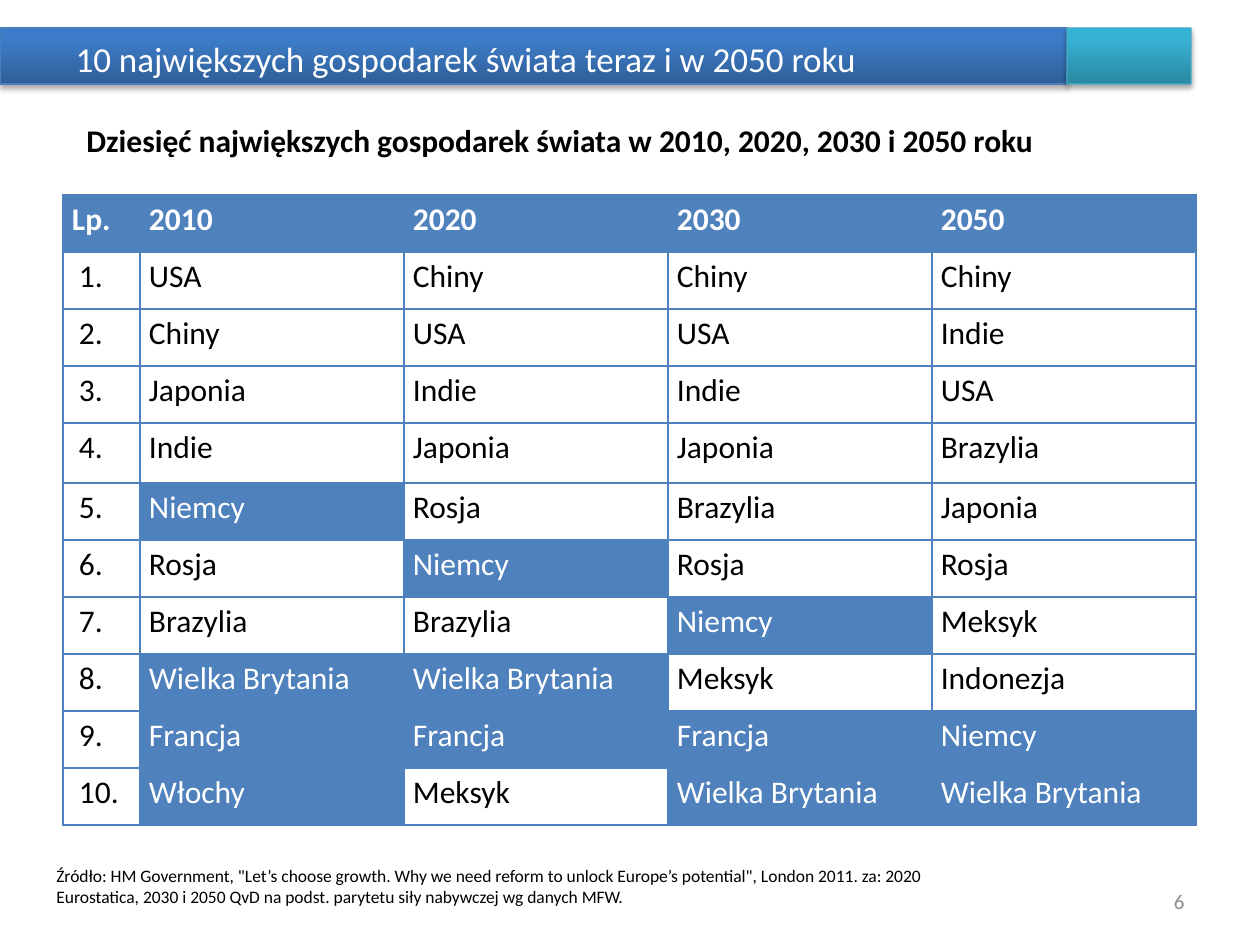
from copy import deepcopy
from dataclasses import dataclass

from lxml.etree import SubElement
from pptx import Presentation
from pptx.dml.color import RGBColor
from pptx.enum.shapes import MSO_SHAPE
from pptx.enum.text import MSO_ANCHOR, PP_ALIGN
from pptx.oxml.ns import qn
from pptx.util import Emu, Pt

FONT = "Calibri"
COLORS = {"white": "FFFFFF", "black": "000000", "grey": "8C8C8C", "blue": "4F81BD",
          "bar_line": "4B7EBC", "tab_line": "46AAC5"}
EUROPE = {"Niemcy", "Wielka Brytania", "Francja", "Włochy"}
RANKS = {
    "2010": ["USA", "Chiny", "Japonia", "Indie", "Niemcy", "Rosja", "Brazylia",
             "Wielka Brytania", "Francja", "Włochy"],
    "2020": ["Chiny", "USA", "Indie", "Japonia", "Rosja", "Niemcy", "Brazylia",
             "Wielka Brytania", "Francja", "Meksyk"],
    "2030": ["Chiny", "USA", "Indie", "Japonia", "Brazylia", "Rosja", "Niemcy",
             "Meksyk", "Francja", "Wielka Brytania"],
    "2050": ["Chiny", "Indie", "USA", "Brazylia", "Japonia", "Rosja", "Meksyk",
             "Indonezja", "Niemcy", "Wielka Brytania"],
}


def px(n: int) -> Emu:
    return Emu(round(n * 914400 / 126))


def rgb(name: str) -> RGBColor:
    return RGBColor.from_string(COLORS.get(name, name))


@dataclass
class Box:
    x: int
    y: int
    w: int
    h: int

    def emu(self) -> list:
        return [px(n) for n in (self.x, self.y, self.w, self.h)]


@dataclass
class Band:
    box: Box
    kind: MSO_SHAPE
    stops: list
    line: str


@dataclass
class Label:
    box: Box
    text: str
    size: int
    color: str = "black"
    bold: bool = False
    align: PP_ALIGN = PP_ALIGN.LEFT
    anchor: MSO_ANCHOR = MSO_ANCHOR.TOP


BANDS = [
    Band(Box(0, 28, 1067, 56), MSO_SHAPE.RECTANGLE,
         ["2F5F99", "3D7CC7", "3A7CCB"], "bar_line"),
    Band(Box(1067, 28, 124, 56), MSO_SHAPE.ROUNDED_RECTANGLE,
         ["2A88A2", "37B1D2", "34B4D6"], "tab_line"),
]
TITLE = Label(Box(63, 32, 1134, 53), "10 największych gospodarek świata teraz i w 2050 roku",
              20, "white", anchor=MSO_ANCHOR.MIDDLE)
LABELS = [
    Label(Box(74, 115, 1121, 50),
          "Dziesięć największych gospodarek świata w 2010, 2020, 2030 i 2050 roku",
          18, bold=True),
    Label(Box(44, 859, 973, 55),
          "Źródło: HM Government, \"Let’s choose growth. Why we need reform to unlock "
          "Europe’s potential\", London 2011. za: 2020 Eurostatica, 2030 i 2050 QvD "
          "na podst. parytetu siły nabywczej wg danych MFW.", 10),
    Label(Box(903, 876, 294, 50), "6", 12, "grey",
          align=PP_ALIGN.RIGHT, anchor=MSO_ANCHOR.MIDDLE),
]


def style(par, size: int, color: str, bold: bool) -> None:
    for run in par.runs:
        run.font.name, run.font.size, run.font.bold = FONT, Pt(size), bold
        run.font.color.rgb = rgb(color)


def write(shape, label: Label) -> None:
    frame = shape.text_frame
    frame.text = label.text
    frame.word_wrap = True
    frame.vertical_anchor = label.anchor
    par = frame.paragraphs[0]
    par.alignment = label.align
    style(par, label.size, label.color, label.bold)


def add_band(slide, band: Band) -> None:
    shape = slide.shapes.add_shape(band.kind, *band.box.emu())
    if band.kind == MSO_SHAPE.ROUNDED_RECTANGLE:
        shape.adjustments[0] = 0.001
    shape.fill.gradient()
    shape.fill.gradient_angle = 90
    props = shape._element.spPr
    stops = props.find(".//" + qn("a:gsLst"))
    stops.append(deepcopy(stops[-1]))
    for stop, color, at in zip(shape.fill.gradient_stops, band.stops, (0, 0.8, 1)):
        stop.color.rgb, stop.position = rgb(color), at
    shape.line.color.rgb, shape.line.width = rgb(band.line), Pt(0.75)
    shape.shadow.inherit = False
    shade = SubElement(props.find(qn("a:effectLst")), qn("a:outerShdw"),
                       blurRad=str(Pt(3.1)), dist=str(Pt(1.8)), dir="5400000",
                       rotWithShape="0")
    tint = SubElement(shade, qn("a:srgbClr"), val=COLORS["black"])
    SubElement(tint, qn("a:alpha"), val="35000")


def add_edges(cell) -> None:
    """Draw the four cell borders, which must come before the fill."""
    props = cell._tc.get_or_add_tcPr()
    for side in ("lnL", "lnR", "lnT", "lnB"):
        edge = SubElement(props, qn("a:" + side), w=str(Pt(1)))
        paint = SubElement(edge, qn("a:solidFill"))
        SubElement(paint, qn("a:srgbClr"), val=COLORS["blue"])


def fill_cell(cell, text: str, head: bool, inset: int) -> None:
    lit = head or text in EUROPE
    add_edges(cell)
    cell.fill.solid()
    cell.fill.fore_color.rgb = rgb("blue" if lit else "white")
    cell.margin_left, cell.margin_right = px(inset), px(9)
    cell.margin_top = cell.margin_bottom = 0
    cell.text_frame.text = text
    par = cell.text_frame.paragraphs[0]
    par.line_spacing = 1.15
    style(par, 18, "white" if lit else "black", head)


def add_ranks(slide, box: Box) -> None:
    rows = [["Lp.", *RANKS]]
    rows += [[f"{n}.", *names] for n, names in enumerate(zip(*RANKS.values()), 1)]
    table = slide.shapes.add_table(len(rows), len(rows[0]), *box.emu()).table
    for i, col in enumerate(table.columns):
        col.width = px(264 if i else 77)
    for r, row in enumerate(rows):
        table.rows[r].height = px(60 if r == 4 else 57)
        for c, text in enumerate(row):
            inset = 16 if r and not c else 9
            fill_cell(table.cell(r, c), text, r == 0, inset)


def main() -> None:
    deck = Presentation()
    deck.slide_width, deck.slide_height = px(1260), px(945)
    slide = deck.slides.add_slide(deck.slide_layouts[5])
    for band in BANDS:
        add_band(slide, band)
    title = slide.shapes.title
    title.left, title.top, title.width, title.height = TITLE.box.emu()
    write(title, TITLE)
    slide.shapes._spTree.append(title._element)
    add_ranks(slide, Box(63, 195, 1133, 630))
    for label in LABELS:
        write(slide.shapes.add_textbox(*label.box.emu()), label)
    deck.save("out.pptx")


if __name__ == "__main__":
    main()
